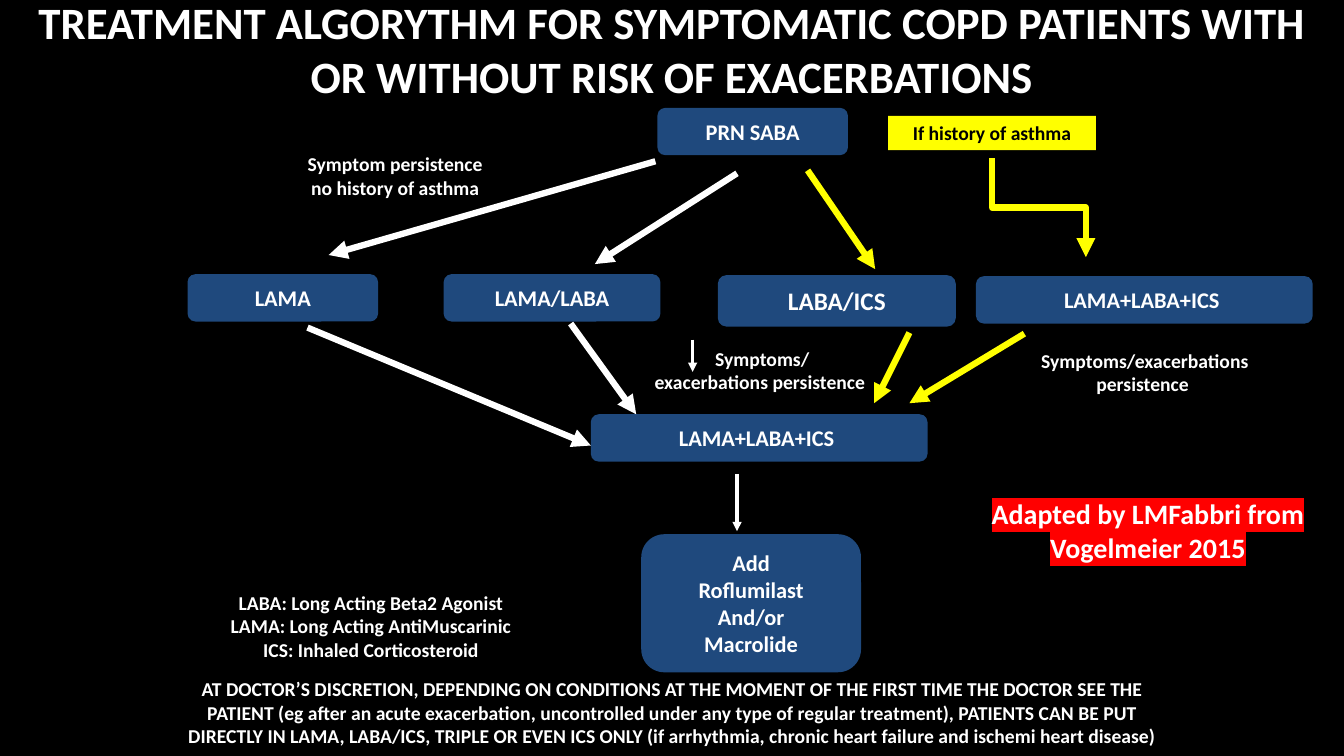
import pptx
import pptx.util
import pptx.dml.color
import pptx.enum.shapes
import pptx.enum.text
import pptx.oxml
import pptx.oxml.ns

PX = 9144
FONT = "Calibri"
BLACK = pptx.dml.color.RGBColor(0x00, 0x00, 0x00)
WHITE = pptx.dml.color.RGBColor(0xFF, 0xFF, 0xFF)
YELLOW = pptx.dml.color.RGBColor(0xFF, 0xFF, 0x00)
RED = pptx.dml.color.RGBColor(0xFF, 0x00, 0x00)
NAVY = pptx.dml.color.RGBColor(0x1F, 0x49, 0x7D)

TITLE = ("TREATMENT ALGORYTHM FOR SYMPTOMATIC COPD PATIENTS WITH "
         "OR WITHOUT RISK OF EXACERBATIONS")
DISCRETION = (
    "AT DOCTOR’S DISCRETION, DEPENDING ON CONDITIONS AT THE MOMENT OF THE FIRST TIME "
    "THE DOCTOR SEE THE PATIENT (eg after an acute exacerbation, uncontrolled under any "
    "type of regular treatment), PATIENTS CAN BE PUT DIRECTLY IN LAMA, LABA/ICS, TRIPLE "
    "OR EVEN ICS ONLY (if arrhythmia, chronic heart failure and ischemi heart disease)")

TREATMENTS = [
    ((652, 107, 189, 47), ["PRN SABA"], 16),
    ((186, 272, 189, 47), ["LAMA"], 16),
    ((440, 272, 215, 47), ["LAMA/LABA"], 16),
    ((712, 273, 236, 51), ["LABA/ICS"], 18),
    ((968, 274, 334, 47), ["LAMA+LABA+ICS "], 16),
    ((586, 411, 334, 47), ["LAMA+LABA+ICS "], 16),
    ((636, 530, 218, 137), ["Add", "Roflumilast", "And/or", "Macrolide"], 16),
]
NOTES = [
    ((274, 146, 236, 57), ["Symptom persistence", "no history of asthma"]),
    ((513, 339, 486, 57), ["Symptoms/", "exacerbations persistence "]),
    ((997, 341, 277, 57), ["Symptoms/exacerbations persistence "]),
    ((186, 581, 364, 81), ["LABA: Long Acting Beta2 Agonist",
                           "LAMA: Long Acting AntiMuscarinic",
                           "ICS: Inhaled Corticosteroid"]),
    ((167, 667, 1000, 81), [DISCRETION]),
]
ARROWS = [
    ((650, 160), (326, 253), WHITE, 4.5),
    ((731, 172), (590, 262), WHITE, 4.5),
    ((801, 169), (868, 267), YELLOW, 4.5),
    ((305, 325), (586, 442), WHITE, 4.5),
    ((566, 321), (631, 411), WHITE, 4.5),
    ((902, 330), (867, 400), YELLOW, 4.5),
    ((1016, 331), (902, 400), YELLOW, 4.5),
    ((687, 337), (687, 369), WHITE, 2.25),
    ((731, 470), (731, 527), WHITE, 2.25),
]


def emu(*lengths):
    return [pptx.util.Emu(round(length * PX)) for length in lengths]


def highlight(run, color):
    mark = pptx.oxml.parse_xml(
        f'<a:highlight {pptx.oxml.ns.nsdecls("a")}><a:srgbClr val="{color}"/></a:highlight>')
    run.font.fill._xPr.find(pptx.oxml.ns.qn("a:solidFill")).addnext(mark)


def write_text(shape, lines, size, color=WHITE, marker=None, margins=(10, 5),
               anchor=pptx.enum.text.MSO_ANCHOR.TOP):
    frame = shape.text_frame
    frame.word_wrap = True
    frame.auto_size = pptx.enum.text.MSO_AUTO_SIZE.NONE
    frame.vertical_anchor = anchor
    frame.margin_left, frame.margin_top = emu(*margins)
    frame.margin_right, frame.margin_bottom = emu(*margins)
    for index, line in enumerate(lines):
        paragraph = frame.add_paragraph() if index else frame.paragraphs[0]
        paragraph.alignment = pptx.enum.text.PP_ALIGN.CENTER
        run = paragraph.add_run()
        run.text = line
        run.font.name = FONT
        run.font.size = pptx.util.Pt(size)
        run.font.bold = True
        run.font.color.rgb = color
        if marker is not None:
            highlight(run, marker)


def set_title(slide, box, text):
    title = slide.shapes.title
    title.left, title.top, title.width, title.height = emu(*box)
    write_text(title, [text], 32, anchor=pptx.enum.text.MSO_ANCHOR.MIDDLE)


def add_box(slide, kind, box, fill):
    shape = slide.shapes.add_shape(kind, *emu(*box))
    shape.shadow.inherit = False
    shape.fill.solid()
    shape.fill.fore_color.rgb = fill
    shape.line.fill.background()
    return shape


def add_treatment(slide, box, lines, size):
    shape = add_box(slide, pptx.enum.shapes.MSO_SHAPE.ROUNDED_RECTANGLE, box, NAVY)
    write_text(shape, lines, size, margins=(4, 8), anchor=pptx.enum.text.MSO_ANCHOR.MIDDLE)


def add_note(slide, box, lines, size=14, marker=None):
    write_text(slide.shapes.add_textbox(*emu(*box)), lines, size, marker=marker)


def add_arrow(slide, start, end, color, width,
              kind=pptx.enum.shapes.MSO_CONNECTOR.STRAIGHT):
    arrow = slide.shapes.add_connector(kind, *emu(*start, *end))
    arrow.line.color.rgb = color
    arrow.line.width = pptx.util.Pt(width)
    line = arrow.line._get_or_add_ln()
    line.append(pptx.oxml.parse_xml(
        f'<a:tailEnd {pptx.oxml.ns.nsdecls("a")} type="triangle"/>'))
    line.addnext(pptx.oxml.parse_xml(f'<a:effectLst {pptx.oxml.ns.nsdecls("a")}/>'))
    return arrow


def add_downward_elbow(slide, start, end, color, width):
    center_x, center_y = (start[0] + end[0]) / 2, (start[1] + end[1]) / 2
    half_run, half_drop = (end[0] - start[0]) / 2, (end[1] - start[1]) / 2
    arrow = add_arrow(slide, (center_x + half_drop, center_y - half_run),
                      (center_x - half_drop, center_y + half_run), color, width,
                      pptx.enum.shapes.MSO_CONNECTOR.ELBOW)
    arrow._element.spPr.find(pptx.oxml.ns.qn("a:xfrm")).set("rot", str(270 * 60000))


def main():
    presentation = pptx.Presentation()
    presentation.slide_width, presentation.slide_height = emu(1333, 750)
    slide = presentation.slides.add_slide(presentation.slide_layouts[5])
    slide.background.fill.solid()
    slide.background.fill.fore_color.rgb = BLACK

    set_title(slide, (0, -16, 1333, 128), TITLE)
    for box, lines in NOTES:
        add_note(slide, box, lines)
    add_note(slide, (968, 488, 341, 77), ["Adapted by LMFabbri from Vogelmeier 2015"], 20, RED)
    asthma = add_box(slide, pptx.enum.shapes.MSO_SHAPE.RECTANGLE, (881, 115, 206, 34), YELLOW)
    write_text(asthma, ["If history of asthma"], 14, BLACK)
    for box, lines, size in TREATMENTS:
        add_treatment(slide, box, lines, size)
    for start, end, color, width in ARROWS:
        add_arrow(slide, start, end, color, width)
    add_downward_elbow(slide, (984, 157), (1077, 255), YELLOW, 4.5)

    presentation.save("out.pptx")


if __name__ == "__main__":
    main()
